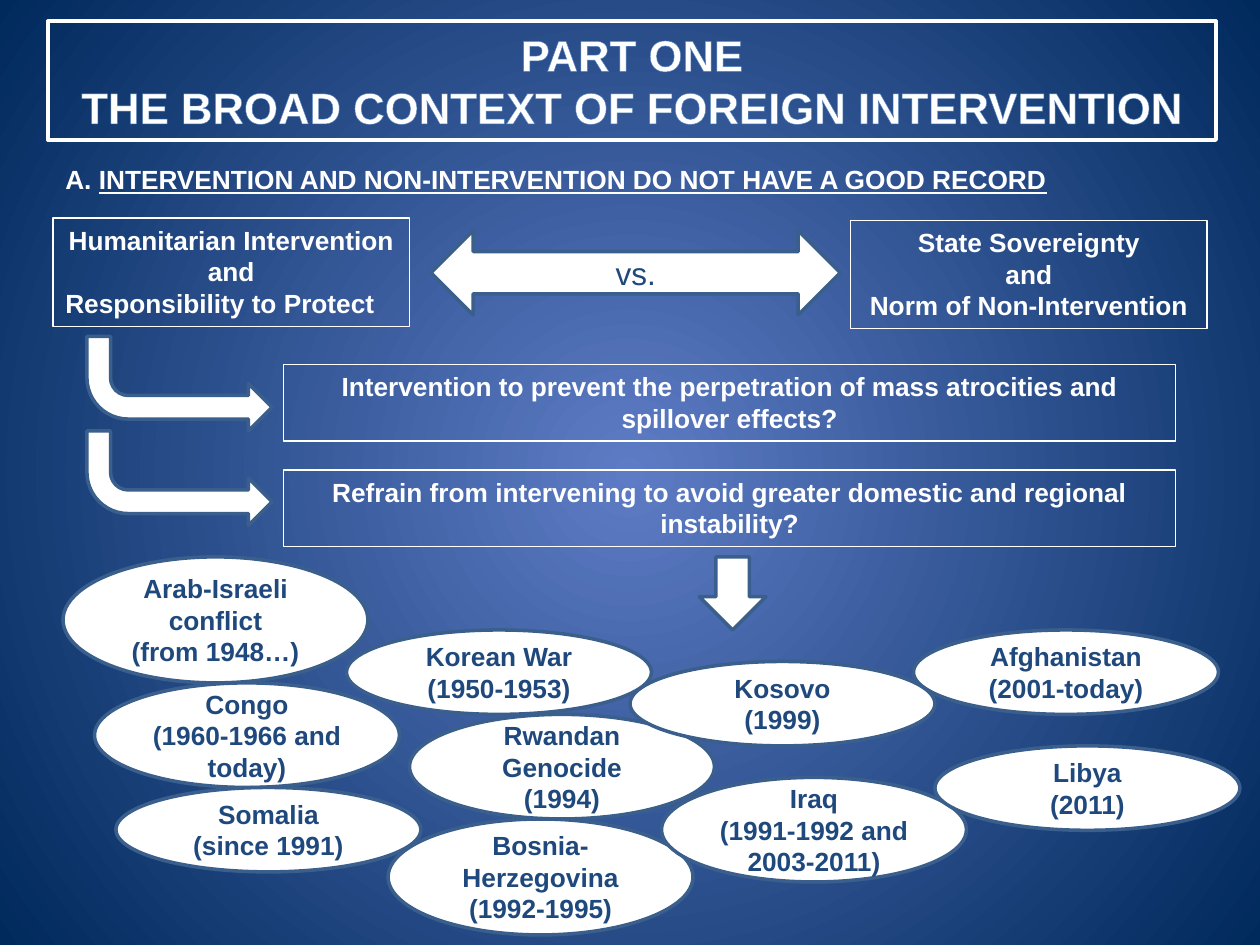
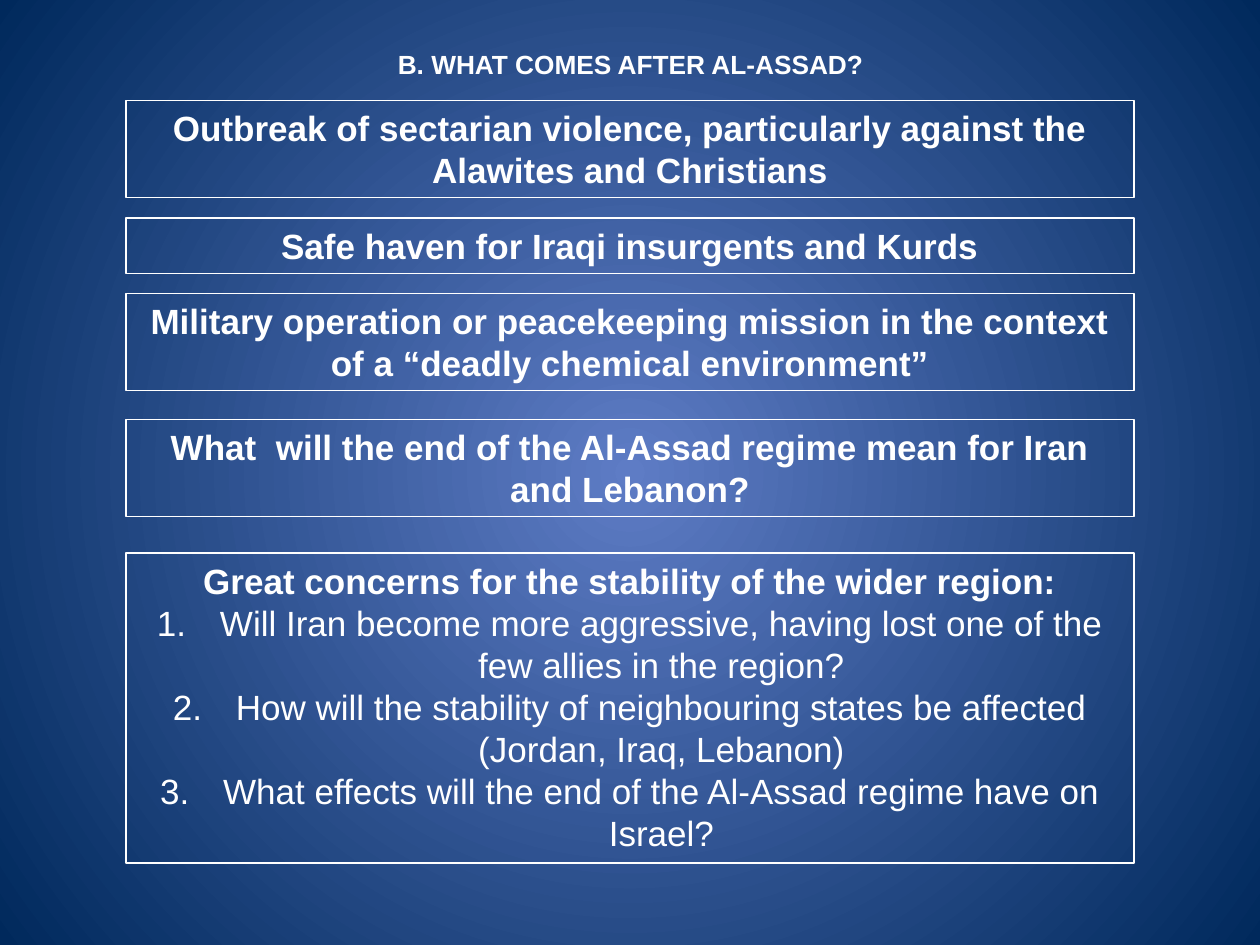
from lxml import etree
from pptx import Presentation
from pptx.dml.color import RGBColor
from pptx.enum.shapes import MSO_SHAPE as Shape
from pptx.enum.text import MSO_ANCHOR as Anchor, MSO_AUTO_SIZE as AutoSize, PP_ALIGN as Align
from pptx.oxml.ns import qn
from pptx.util import Inches, Pt

FONT = "Arial"
WHITE, NAVY, EDGE, GLOW = "FFFFFF", "1F497D", "3A5F8C", "4F81BD"
CENTRE_BLUE, CORNER_BLUE = "5E7CC5", "00295C"
TITLE_ONLY = 5


def rgb(hex_colour):
    return RGBColor.from_string(hex_colour)


def place(shape, left, top, width, height):
    shape.left, shape.top = Inches(left), Inches(top)
    shape.width, shape.height = Inches(width), Inches(height)


def outline_text(run, colour, width):
    line = etree.Element(qn("a:ln"), w=str(Pt(width)))
    fill = etree.SubElement(line, qn("a:solidFill"))
    etree.SubElement(fill, qn("a:srgbClr"), val=colour)
    run._r.get_or_add_rPr().insert(0, line)


def number(paragraph):
    """Turn the paragraph into a numbered item with a hanging indent."""
    properties = paragraph._p.get_or_add_pPr()
    properties.set("marL", str(Inches(0.5)))
    properties.set("indent", str(-Inches(0.5)))
    etree.SubElement(properties, qn("a:buFont"), typeface="+mj-lt")
    etree.SubElement(properties, qn("a:buAutoNum"), type="arabicPeriod")


class Deck:
    def __init__(self):
        self.prs = Presentation()
        self.prs.slide_width, self.prs.slide_height = Inches(10), Inches(7.5)
        self.slide = None
        self.paint_background()

    def paint_background(self):
        """Give the master a round gradient, light in the middle."""
        master = self.prs.slide_master
        fill = master.background.fill
        fill.gradient()
        for stop, colour in zip(fill.gradient_stops, (CENTRE_BLUE, CORNER_BLUE)):
            stop.color.rgb = rgb(colour)
        gradient = master.element.find(".//" + qn("a:gradFill"))
        gradient.remove(gradient.find(qn("a:lin")))
        circle = etree.SubElement(gradient, qn("a:path"), path="circle")
        etree.SubElement(circle, qn("a:fillToRect"), l="50000", t="50000", r="50000", b="50000")

    def add_slide(self):
        self.slide = self.prs.slides.add_slide(self.prs.slide_layouts[TITLE_ONLY])

    def set_text(self, shape, lines, size=15, colour=WHITE, bold=True,
                 anchor=Anchor.TOP, wrap=True, align=Align.CENTER, numbered=()):
        """Fill the shape with the lines, then the numbered items in regular weight."""
        frame = shape.text_frame
        frame.word_wrap, frame.auto_size = wrap, AutoSize.NONE
        frame.vertical_anchor = anchor
        frame.text = "\n".join([*lines, *numbered])
        for index, paragraph in enumerate(frame.paragraphs):
            is_item = index >= len(lines)
            if is_item:
                number(paragraph)
            paragraph.alignment = align
            font = paragraph.font
            font.name, font.size, font.bold = FONT, Pt(size), bold and not is_item
            font.color.rgb = rgb(colour)
        return frame.paragraphs

    def title(self, at, lines, size=15, wrap=True):
        title = self.slide.shapes.title
        place(title, *at)
        self.set_text(title, lines, size, wrap=wrap)
        return title

    def subheading(self, at, label, underlined):
        box = self.slide.shapes.add_textbox(*map(Inches, at))
        line = self.set_text(box, [label], align=Align.LEFT)[0]
        run = line.add_run()
        run.text, run.font.underline = underlined, True

    def frame_box(self, at, lines, size=15, numbered=()):
        box = self.slide.shapes.add_shape(Shape.RECTANGLE, *map(Inches, at))
        box.shadow.inherit = False
        box.fill.background()
        box.line.color.rgb, box.line.width = rgb(WHITE), Pt(0.75)
        return self.set_text(box, lines, size, numbered=numbered)

    def white_shape(self, kind, at, lines=(), size=15, bold=True):
        shape = self.slide.shapes.add_shape(kind, *map(Inches, at))
        shape.shadow.inherit = False
        shape.fill.solid()
        shape.fill.fore_color.rgb = rgb(WHITE)
        shape.line.color.rgb, shape.line.width = rgb(EDGE), Pt(2)
        if lines:
            self.set_text(shape, lines, size, NAVY, bold, Anchor.MIDDLE)
        return shape

    def turn_arrow(self, top):
        """Arrow that runs down and then bends to the right."""
        arrow = self.white_shape(Shape.BENT_ARROW, (0.69, top, 1.47, 0.75))
        arrow._element.spPr.find(qn("a:xfrm")).set("flipV", "1")


CONFLICTS = [  # left, top, height, lines
    (0.5, 4.42, 1, ["Arab-Israeli conflict", "(from 1948…)"]),
    (2.75, 5, 0.67, ["Korean War (1950-1953)"]),
    (0.75, 5.42, 0.83, ["Congo", "(1960-1966 and today)"]),
    (0.92, 6.25, 0.67, ["Somalia", "(since 1991)"]),
    (3.08, 6.5, 0.92, ["Bosnia-Herzegovina (1992-1995)"]),
    (3.25, 5.67, 0.83, ["Rwandan Genocide (1994)"]),
    (5.25, 6.17, 0.83, ["Iraq", "(1991-1992 and 2003-2011)"]),
    (7.25, 5, 0.67, ["Afghanistan", "(2001-today)"]),
    (5, 5.25, 0.67, ["Kosovo", "(1999)"]),
    (7.42, 5.92, 0.67, ["Libya", "(2011)"]),
]

OUTCOMES = [  # top, height, statement, numbered concerns
    (0.8, 0.77, "Outbreak of sectarian violence, particularly against the Alawites and Christians", []),
    (1.73, 0.44, "Safe haven for Iraqi insurgents and Kurds", []),
    (2.33, 0.77, "Military operation or peacekeeping mission in the context of a “deadly chemical environment”", []),
    (3.33, 0.77, "What  will the end of the Al-Assad regime mean for Iran and Lebanon?", []),
    (4.39, 2.46, "Great concerns for the stability of the wider region:", [
        "Will Iran become more aggressive, having lost one of the few allies in the region?",
        "How will the stability of neighbouring states be affected (Jordan, Iraq, Lebanon)",
        "What effects will the end of the Al-Assad regime have on Israel?",
    ]),
]


def build_context(deck):
    deck.add_slide()
    title = deck.title((0.38, 0.17, 9.27, 0.94),
                       ["PART ONE", "THE BROAD CONTEXT OF FOREIGN INTERVENTION"], 25, wrap=False)
    title.line.color.rgb, title.line.width = rgb(WHITE), Pt(2.25)
    for paragraph in title.text_frame.paragraphs:
        outline_text(paragraph.runs[0], GLOW, 0.8)

    deck.subheading((0.42, 1.25, 8.17, 0.35), "A. ",
                    "INTERVENTION AND NON-INTERVENTION DO NOT HAVE A GOOD RECORD")
    intervention = deck.frame_box((0.42, 1.73, 2.83, 0.86),
                                  ["Humanitarian Intervention and", "Responsibility to Protect"])
    intervention[1].alignment = Align.LEFT
    deck.white_shape(Shape.LEFT_RIGHT_ARROW, (3.42, 1.83, 3.25, 0.67), ["vs."], 18, bold=False)
    deck.frame_box((6.75, 1.75, 2.83, 0.86),
                   ["State Sovereignty", "and", "Norm of Non-Intervention"])

    questions = [
        (2.67, 2.89, "Intervention to prevent the perpetration of mass atrocities and spillover effects?"),
        (3.42, 3.73, "Refrain from intervening to avoid greater domestic and regional instability?"),
    ]
    for arrow_top, box_top, question in questions:
        deck.turn_arrow(arrow_top)
        deck.frame_box((2.25, box_top, 7.08, 0.61), [question])

    deck.white_shape(Shape.DOWN_ARROW, (5.55, 4.42, 0.53, 0.58))
    for left, top, height, lines in CONFLICTS:
        deck.white_shape(Shape.OVAL, (left, top, 2.42, height), lines)


def build_aftermath(deck):
    deck.add_slide()
    deck.title((0.42, 0.33, 9.17, 0.35), ["B. WHAT COMES AFTER AL-ASSAD?"])
    for top, height, statement, concerns in OUTCOMES:
        deck.frame_box((1, top, 8, height), [statement], 20, concerns)


def main():
    deck = Deck()
    build_context(deck)
    build_aftermath(deck)
    deck.prs.save("out.pptx")


if __name__ == "__main__":
    main()
